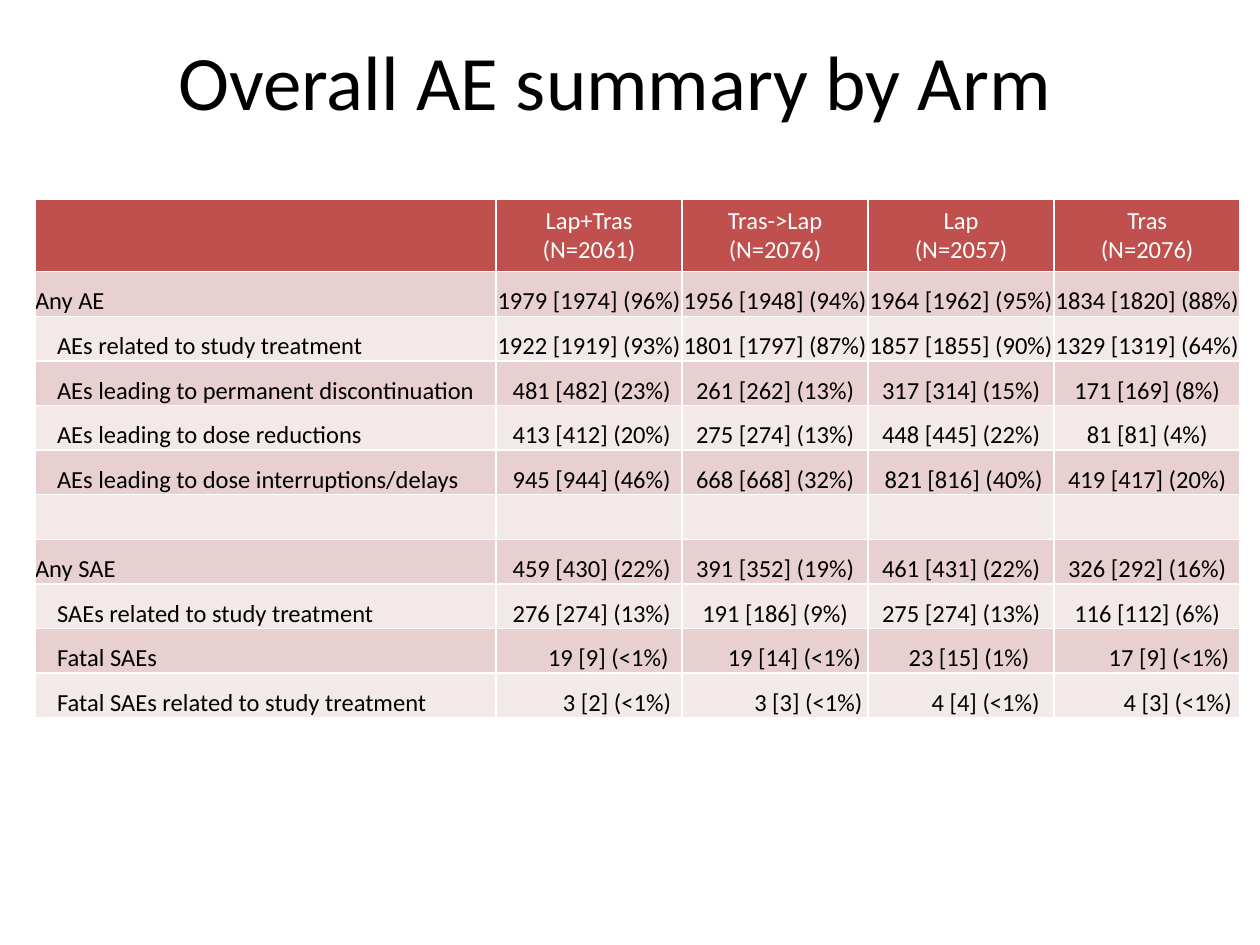
from pptx import Presentation
from pptx.dml.color import RGBColor
from pptx.enum.text import MSO_ANCHOR, PP_ALIGN
from pptx.util import Pt

TOP, BOTTOM = MSO_ANCHOR.TOP, MSO_ANCHOR.BOTTOM
LEFT, CENTER = PP_ALIGN.LEFT, PP_ALIGN.CENTER
FONT = "Calibri"
COLORS = {
    "text": "000000",
    "header": "C0504D",
    "header_text": "FFFFFF",
    "odd": "E8D0D0",
    "even": "F4E9E9",
}
LABEL_WIDTH, ARM_WIDTH = 263.5, 106.3
HEADER_HEIGHT, ROW_HEIGHT = 41.3, 25.5
SUB = 12.6
ARMS = ["", "Lap+Tras\n(N=2061)", "Tras->Lap\n(N=2076)", "Lap\n(N=2057)", "Tras\n(N=2076)"]
FLUSH = (0, 0, 0, 0, 0)
NUDGED = (SUB, 3, 0, 0, 0)
ROWS = [
    (["Any AE", "1979 [1974] (96%)", "1956 [1948] (94%)", "1964 [1962] (95%)",
      "1834 [1820] (88%)"], FLUSH),
    (["AEs related to study treatment", "1922 [1919] (93%)", "1801 [1797] (87%)",
      "1857 [1855] (90%)", "1329 [1319] (64%)"], (SUB, 0, 0, 0, 0)),
    (["AEs leading to permanent discontinuation", "481 [482] (23%)", "261 [262] (13%)",
      "317 [314] (15%)", "171 [169] (8%)"], NUDGED),
    (["AEs leading to dose reductions", "413 [412] (20%)", "275 [274] (13%)",
      "448 [445] (22%)", "81 [81] (4%)"], NUDGED),
    (["AEs leading to dose interruptions/delays", "945 [944] (46%)", "668 [668] (32%)",
      "821 [816] (40%)", "419 [417] (20%)"], (SUB, 3, 0, 3, 0)),
    ([""] * 5, FLUSH),
    (["Any SAE", "459 [430] (22%)", "391 [352] (19%)", "461 [431] (22%)",
      "326 [292] (16%)"], (0, 3, 0, 0, 0)),
    (["SAEs related to study treatment", "276 [274] (13%)", "191 [186] (9%)",
      "275 [274] (13%)", "116 [112] (6%)"], NUDGED),
    (["Fatal SAEs", "19 [9] (<1%)", "19 [14] (<1%)", "23 [15] (1%)",
      "17 [9] (<1%)"], (SUB, 22, 22, 9, 25)),
    (["Fatal SAEs related to study treatment", "3 [2] (<1%)", "3 [3] (<1%)",
      "4 [4] (<1%)", "4 [3] (<1%)"], (SUB, 32, 38, 28, 35)),
]


def rgb(name):
    """Return the named colour."""
    return RGBColor.from_string(COLORS[name])


def style_paragraph(p, size, color, align):
    """Set the font and alignment of a paragraph."""
    p.alignment = align
    p.font.name = FONT
    p.font.size = Pt(size)
    p.font.bold = False
    p.font.color.rgb = rgb(color)


def add_title(slide, x, y, w, h):
    """Add the slide title."""
    tf = slide.shapes.add_textbox(Pt(x), Pt(y), Pt(w), Pt(h)).text_frame
    tf.word_wrap = True
    tf.vertical_anchor = TOP
    p = tf.paragraphs[0]
    p.text = "Overall AE summary by Arm"
    style_paragraph(p, 44, "text", CENTER)


def fill_cell(cell, text, fill, color, align):
    """Write one table cell on its fill."""
    cell.fill.solid()
    cell.fill.fore_color.rgb = rgb(fill)
    cell.text = text
    for p in cell.text_frame.paragraphs:
        style_paragraph(p, 14, color, align)


def add_summary_table(slide, x, y):
    """Add the adverse event table with its top left corner at x, y."""
    n_rows, n_cols = len(ROWS) + 1, len(ARMS)
    width = LABEL_WIDTH + ARM_WIDTH * (n_cols - 1)
    height = HEADER_HEIGHT + ROW_HEIGHT * len(ROWS)
    table = slide.shapes.add_table(n_rows, n_cols, Pt(x), Pt(y), Pt(width), Pt(height)).table
    for i, column in enumerate(table.columns):
        column.width = Pt(ARM_WIDTH if i else LABEL_WIDTH)
    for i, row in enumerate(table.rows):
        row.height = Pt(ROW_HEIGHT if i else HEADER_HEIGHT)
    for c, arm in enumerate(ARMS):
        fill_cell(table.cell(0, c), arm, "header", "header_text", CENTER)
    for r, (texts, indents) in enumerate(ROWS, 1):
        for c, (text, indent) in enumerate(zip(texts, indents)):
            cell = table.cell(r, c)
            fill_cell(cell, text, "odd" if r % 2 else "even", "text", CENTER if c else LEFT)
            cell.vertical_anchor = BOTTOM
            cell.margin_left = Pt(indent)
            cell.margin_right = cell.margin_top = cell.margin_bottom = 0
            cell.text_frame.paragraphs[0].line_spacing = 1.15


def main():
    """Build and save the slide."""
    prs = Presentation()
    prs.slide_width, prs.slide_height = Pt(720), Pt(540)
    slide = prs.slides.add_slide(prs.slide_layouts[6])
    add_title(slide, 20, 15.5, 663, 51)
    add_summary_table(slide, 20, 114)
    prs.save("out.pptx")


if __name__ == "__main__":
    main()
